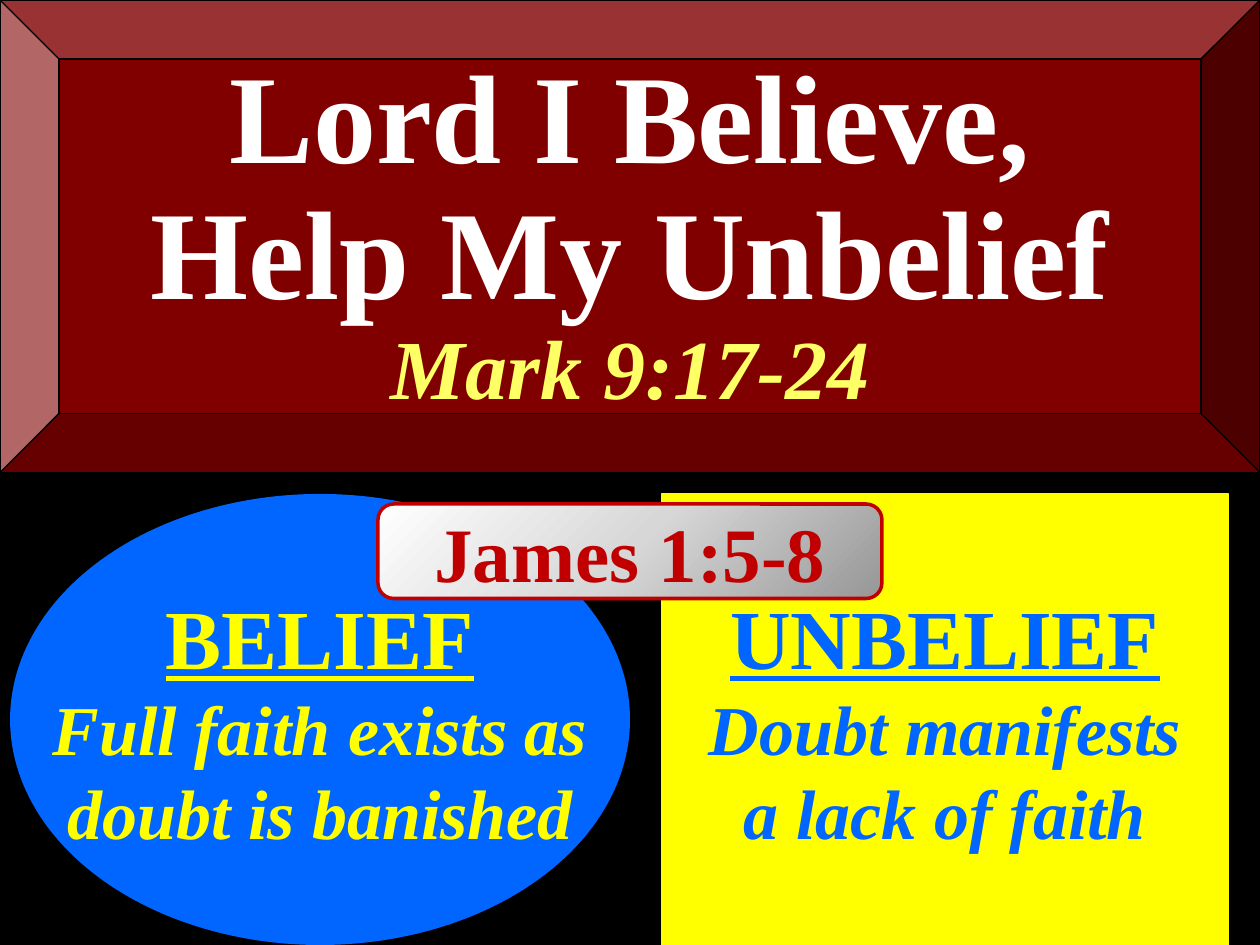
from dataclasses import dataclass

from lxml import etree
from pptx import Presentation
from pptx.dml.color import RGBColor
from pptx.enum.shapes import MSO_SHAPE
from pptx.enum.text import MSO_ANCHOR, PP_ALIGN
from pptx.oxml.ns import qn
from pptx.util import Inches, Pt

BEVEL, OVAL = MSO_SHAPE.BEVEL, MSO_SHAPE.OVAL
RECT, ROUNDED = MSO_SHAPE.RECTANGLE, MSO_SHAPE.ROUNDED_RECTANGLE
MIDDLE, CENTER = MSO_ANCHOR.MIDDLE, PP_ALIGN.CENTER


@dataclass(frozen=True)
class Theme:
    font: str = "Times New Roman"
    black: str = "000000"
    white: str = "FFFFFF"
    maroon: str = "800000"
    cream: str = "FFFF66"
    blue: str = "0066FF"
    yellow: str = "FFFF00"
    red: str = "C00000"
    silver: tuple = ((0, "979797"), (50, "D7D7D7"), (100, "FFFFFF"))
    title: int = 72
    heading: int = 48
    reference: int = 44
    body: int = 40


class Deck:
    def __init__(self, theme):
        self.theme = theme
        self.prs = Presentation()
        self.prs.slide_width, self.prs.slide_height = Inches(10), Inches(7.5)
        self.slide = self.prs.slides.add_slide(self.prs.slide_layouts[6])

    def background(self, color):
        fill = self.slide.background.fill
        fill.solid()
        fill.fore_color.rgb = RGBColor.from_string(color)

    def shape(self, kind, box, fill=None, line=None, width=0.75, wrap=False):
        s = self.slide.shapes.add_shape(kind, *map(Inches, box))
        s.shadow.inherit = False
        if fill:
            s.fill.solid()
            s.fill.fore_color.rgb = RGBColor.from_string(fill)
        if line:
            s.line.color.rgb = RGBColor.from_string(line)
            s.line.width = Pt(width)
        else:
            s.line.fill.background()
        s.text_frame.word_wrap = wrap
        s.text_frame.vertical_anchor = MIDDLE
        return s

    def corner_gradient(self, s, stops):
        """Fill a shape with a radial gradient centred on its bottom right corner."""
        s.fill.gradient()
        grad = s._element.spPr.find(qn("a:gradFill"))
        for child in list(grad):
            grad.remove(child)
        gs_list = etree.SubElement(grad, qn("a:gsLst"))
        for pos, color in stops:
            gs = etree.SubElement(gs_list, qn("a:gs"), pos=str(pos * 1000))
            etree.SubElement(gs, qn("a:srgbClr"), val=color)
        circle = etree.SubElement(grad, qn("a:path"), path="circle")
        etree.SubElement(circle, qn("a:fillToRect"), l="100000", t="100000")

    def line(self, s, text, size, color, italic=False, underline=False, spacing=None):
        """Add one centred paragraph to a shape."""
        tf = s.text_frame
        p = tf.add_paragraph() if tf.text else tf.paragraphs[0]
        p.text = text
        p.alignment = CENTER
        p.line_spacing = spacing
        font = p.font
        font.name, font.size, font.bold = self.theme.font, Pt(size), True
        font.italic, font.underline = italic, underline
        font.color.rgb = RGBColor.from_string(color)

    def panel(self, s, heading, lines, color):
        self.line(s, heading, self.theme.heading, color, underline=True)
        for text in lines:
            self.line(s, text, self.theme.body, color, italic=True)


def main():
    t = Theme()
    deck = Deck(t)
    deck.background(t.black)

    banner = deck.shape(BEVEL, (0, 0, 10, 3.75), t.maroon, t.black)
    for text in ("Lord I Believe,", "Help My Unbelief"):
        deck.line(banner, text, t.title, t.white, spacing=0.9)
    deck.line(banner, "Mark 9:17-24", t.heading, t.cream, italic=True, spacing=0.9)

    belief = deck.shape(OVAL, (0.08, 3.92, 4.92, 3.58), t.blue)
    deck.panel(belief, "BELIEF", ("Full faith exists as", "doubt is banished"), t.yellow)

    unbelief = deck.shape(RECT, (5.25, 3.92, 4.5, 3.58), t.yellow, t.yellow)
    deck.panel(unbelief, "UNBELIEF", ("Doubt manifests", "a lack of faith"), t.blue)

    reference = deck.shape(ROUNDED, (3, 4, 4, 0.75), line=t.red, width=2, wrap=True)
    deck.corner_gradient(reference, t.silver)
    deck.line(reference, "James 1:5-8", t.reference, t.red)

    deck.prs.save("out.pptx")


if __name__ == "__main__":
    main()
